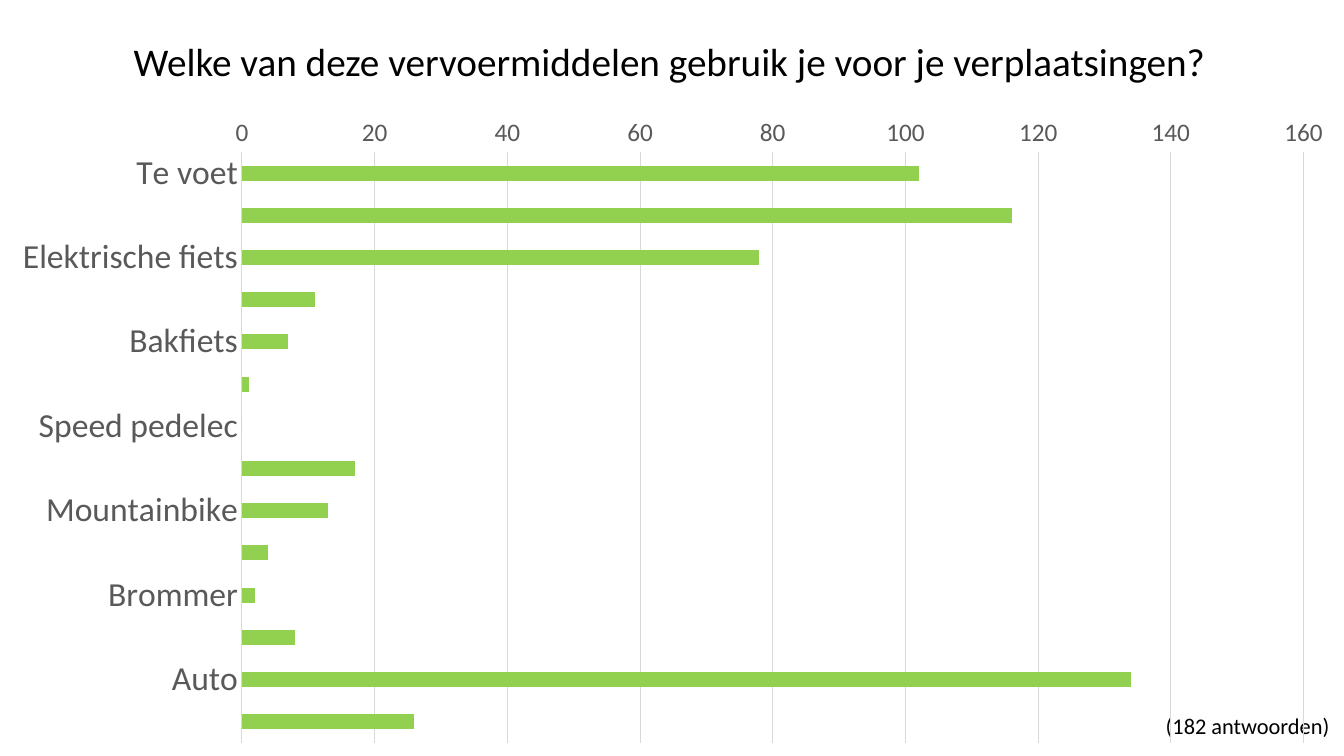
from lxml import etree
from pptx import Presentation
from pptx.chart.data import CategoryChartData
from pptx.dml.color import RGBColor
from pptx.enum.chart import XL_CHART_TYPE as ChartType, XL_TICK_MARK as TickMark
from pptx.enum.text import MSO_ANCHOR as Anchor, PP_ALIGN as Align
from pptx.oxml.ns import qn
from pptx.util import Inches, Pt

WIDTH, HEIGHT = Inches(13.33), Inches(7.5)
FONT = "Calibri"
COLORS = {"text": "000000", "label": "595959", "line": "D9D9D9", "bar": "92D050"}
TITLE = "Welke van deze vervoermiddelen gebruik je voor je verplaatsingen?"
ANSWERS_BY_TRANSPORT = {
    "Te voet": 102,
    "Gewone fiets": 116,
    "Elektrische fiets": 78,
    "Fiets met fietskar": 11,
    "Bakfiets": 7,
    "tandem": 1,
    "Speed pedelec": 0,
    "Koersfiets": 17,
    "Mountainbike": 13,
    "Elektrische step": 4,
    "Brommer": 2,
    "Motor": 8,
    "Auto": 134,
    "Openbaar vervoer": 26,
}
# Shares of the chart frame: left, top, width, height
PLOT_AREA = {"x": 0.18, "y": 0.07, "w": 0.79, "h": 0.91}


def rgb(name):
    return RGBColor.from_string(COLORS[name])


def box(left, top, width, height):
    """Turn shares of the slide's size into lengths."""
    return (int(left * WIDTH), int(top * HEIGHT),
            int(width * WIDTH), int(height * HEIGHT))


def set_font(font, size, color):
    font.name, font.size, font.bold = FONT, Pt(size), False
    font.color.rgb = rgb(color)


def set_line(line, color, width=0.75):
    line.color.rgb = rgb(color)
    line.width = Pt(width)


def set_title(slide, text, area):
    sp = slide.shapes.title
    sp.left, sp.top, sp.width, sp.height = area
    tf = sp.text_frame
    tf.text = text
    tf.vertical_anchor = Anchor.MIDDLE
    p = tf.paragraphs[0]
    p.alignment = Align.CENTER
    set_font(p.font, 28, "text")


def add_note(slide, text, area):
    tf = slide.shapes.add_textbox(*area).text_frame
    tf.word_wrap = False
    tf.text = text
    set_font(tf.paragraphs[0].font, 16, "text")


def style_axis(axis, size):
    axis.major_tick_mark = axis.minor_tick_mark = TickMark.NONE
    set_font(axis.tick_labels.font, size, "label")


def set_plot_area(chart, shares):
    """Fix the inner plot area, given as shares of the chart frame."""
    plot_area = chart.element.find(f".//{qn('c:plotArea')}")
    for old in plot_area.findall(qn("c:layout")):
        plot_area.remove(old)
    layout = etree.Element(qn("c:layout"))
    plot_area.insert(0, layout)
    manual = etree.SubElement(layout, qn("c:manualLayout"))
    settings = {"layoutTarget": "inner", "xMode": "edge", "yMode": "edge", **shares}
    for tag, value in settings.items():
        etree.SubElement(manual, qn(f"c:{tag}")).set("val", str(value))


def add_bar_chart(slide, values, area):
    data = CategoryChartData()
    data.categories = list(values)
    data.add_series("Series 1", list(values.values()))
    chart = slide.shapes.add_chart(ChartType.BAR_CLUSTERED, *area, data).chart
    chart.has_legend = chart.has_title = False
    set_font(chart.font, 10, "text")
    set_plot_area(chart, PLOT_AREA)

    plot = chart.plots[0]
    plot.gap_width = 182
    plot.vary_by_categories = False
    fill = plot.series[0].format.fill
    fill.solid()
    fill.fore_color.rgb = rgb("bar")

    categories, scale = chart.category_axis, chart.value_axis
    style_axis(categories, 24)
    categories.reverse_order = True
    set_line(categories.format.line, "line")
    style_axis(scale, 18)
    scale.minimum_scale, scale.maximum_scale, scale.major_unit = 0, 160, 20
    scale.format.line.fill.background()
    set_line(scale.major_gridlines.format.line, "line")


def main():
    prs = Presentation()
    prs.slide_width, prs.slide_height = WIDTH, HEIGHT
    title_only = prs.slide_layouts[5]
    slide = prs.slides.add_slide(title_only)
    set_title(slide, TITLE, box(0.023, 0.043, 0.95, 0.076))
    add_note(slide, "(182 antwoorden)", box(0.86, 0.935, 0.139, 0.049))
    add_bar_chart(slide, ANSWERS_BY_TRANSPORT, box(0, 0.141, 1, 0.859))
    prs.save("out.pptx")


if __name__ == "__main__":
    main()
